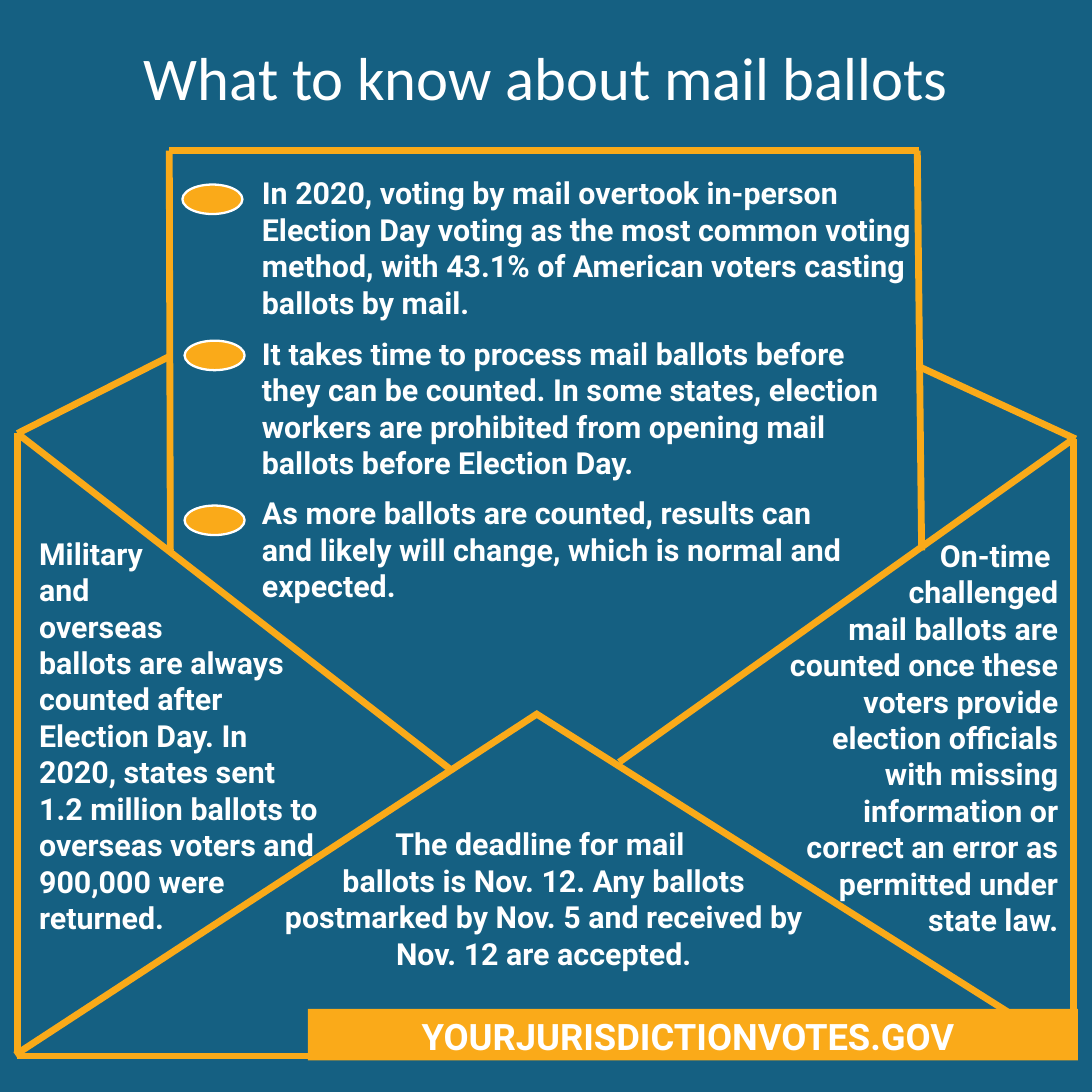
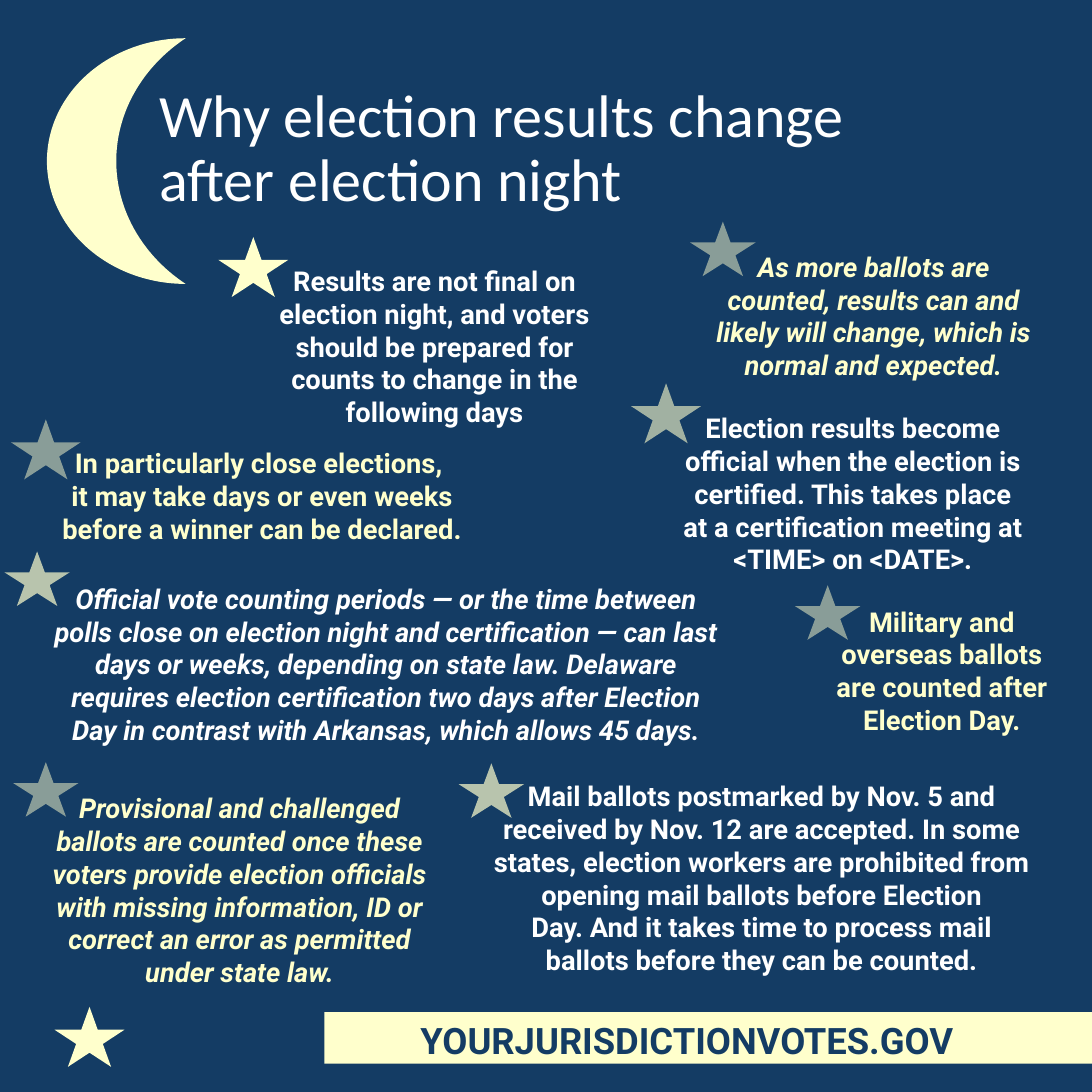
"""Build two square voter-information slides: mail ballots and election night."""
from dataclasses import dataclass

from lxml import etree
from pptx import Presentation
from pptx.dml.color import RGBColor
from pptx.enum.shapes import MSO_CONNECTOR, MSO_SHAPE
from pptx.enum.text import MSO_ANCHOR, PP_ALIGN
from pptx.oxml.ns import qn
from pptx.util import Inches, Pt

LEFT, CENTER, RIGHT = PP_ALIGN.LEFT, PP_ALIGN.CENTER, PP_ALIGN.RIGHT
TOP, MIDDLE = MSO_ANCHOR.TOP, MSO_ANCHOR.MIDDLE
RECT, OVAL, MOON, STAR = (MSO_SHAPE.RECTANGLE, MSO_SHAPE.OVAL,
                          MSO_SHAPE.MOON, MSO_SHAPE.STAR_5_POINT)
STRAIGHT = MSO_CONNECTOR.STRAIGHT


@dataclass(frozen=True)
class Theme:
    teal: str = "156082"
    navy: str = "143C64"
    orange: str = "FAA919"
    cream: str = "FFFFCC"
    white: str = "FFFFFF"
    title_font: str = "Calibri"
    body_font: str = "Roboto"
    title: float = 40
    night_title: float = 39.6
    fact: float = 20
    note: float = 18
    footer: float = 24
    envelope_line: float = 4.5
    oval_line: float = 1.5


T = Theme(orange="FAAA19")
SIDE = Inches(10)
CELL = SIDE / 10
WEB_ADDRESS = "YOURJURISDICTIONVOTES.GOV"

ENVELOPE = [
    ((4.93, 6.53), (0.14, 9.66)), ((4.9, 6.53), (9.85, 9.66)),
    ((0.16, 3.97), (1.56, 3.26)), ((1.55, 1.38), (1.56, 5.04)),
    ((1.55, 1.38), (8.42, 1.38)), ((8.4, 1.38), (8.44, 5.04)),
    ((0.16, 3.97), (0.16, 9.63)), ((0.16, 9.67), (9.83, 9.67)),
    ((9.83, 4.02), (9.83, 9.68)), ((0.16, 3.97), (4.13, 7.05)),
    ((5.67, 6.98), (9.83, 4.02)), ((8.4, 3.35), (9.85, 4.02)),
]

OVAL_SIZE = (0.55, 0.27)
LETTER_FACTS = [
    ((1.67, 1.69), (2.3, 1.55, 6.39, 1.75),
     "In 2020, voting by mail overtook in-person Election Day voting as the most "
     "common voting method, with 43.1% of American voters casting ballots by mail."),
    ((1.69, 3.12), (2.3, 3.02, 5.93, 1.75),
     "It takes time to process mail ballots before they can be counted. In some "
     "states, election workers are prohibited from opening mail ballots before "
     "Election Day."),
    ((1.69, 4.63), (2.3, 4.48, 5.55, 1.41),
     "As more ballots are counted, results can and likely will change, which is "
     "normal and expected."),
]
FLAP_FACTS = [
    ((6.98, 4.87, 2.81, 3.8), RIGHT,
     "On-time \vchallenged\vmail ballots are counted once these voters provide "
     "election officials with missing information or correct an error as permitted "
     "under state law."),
    ((2.32, 7.51, 5.32, 1.75), CENTER,
     "The deadline for mail \vballots is Nov. 12. Any ballots postmarked by Nov. 5 "
     "and received by Nov. 12 are accepted."),
    ((0.26, 4.85, 2.82, 4.14), LEFT,
     "Military\vand\voverseas\vballots are always counted after Election Day. In "
     "2020, states sent 1.2 million ballots to overseas voters and 900,000 were "
     "returned."),
]

SMALL, LARGE = (0.6, 0.5), (0.64, 0.55)
NIGHT_NOTES = [
    ((2, 2.17), LARGE, 100, (2.21, 2.37, 3.54, 1.92), T.white, False,
     "Results are not final on election night, and voters should be prepared for "
     "counts to change in the following days"),
    ((6.32, 2.03), SMALL, 50, (6.41, 2.24, 3.18, 1.62), T.cream, True,
     "As more ballots are counted, results can and likely will change, which is "
     "normal and expected."),
    ((0.1, 3.84), LARGE, 50, (0.4, 4.04, 4, 1.31), T.cream, False,
     "In particularly close elections, \vit may take days or even weeks before a "
     "winner can be declared."),
    ((5.78, 3.51), LARGE, 60, (6.12, 3.72, 3.38, 1.92), T.white, False,
     "Election results become official when the election is certified. This takes "
     "place at a certification meeting at <TIME> on <DATE>."),
    ((0.04, 5.05), SMALL, 70, (0.34, 5.28, 6.39, 1.92), T.white, True,
     "Official vote counting periods — or the time between polls close on election "
     "night and certification — can last days or weeks, depending on state law. "
     "Delaware requires election certification two days after Election Day in "
     "contrast with Arkansas, which allows 45 days."),
    ((7.28, 5.36), SMALL, 50, (7.42, 5.49, 2.41, 1.31), T.cream, False,
     "Military and overseas ballots\vare counted after Election Day."),
    ((0.12, 6.98), SMALL, 50, (0.23, 7.2, 3.93, 2.22), T.cream, True,
     "Provisional and challenged ballots are counted once these voters provide "
     "election officials with missing information, ID or correct an error as "
     "permitted under state law."),
    ((4.2, 6.99), SMALL, 70, (4.36, 7.09, 5.23, 1.92), T.white, False,
     "Mail ballots postmarked by Nov. 5 and received by Nov. 12 are accepted. In "
     "some states, election workers are prohibited from opening mail ballots before "
     "Election\vDay. And it takes time to process mail ballots before they can be "
     "counted."),
]


def grid(*cells):
    return [round(c * CELL) for c in cells]


def rgb(color):
    return RGBColor.from_string(color)


def write(sp, text, *, size, color=T.white, font=T.body_font, bold=True,
          italic=False, align=LEFT, anchor=TOP, spacing=1.0):
    tf = sp.text_frame
    tf.word_wrap = True
    tf.vertical_anchor = anchor
    p = tf.paragraphs[0]
    p.text = text
    p.alignment = align
    p.line_spacing = spacing
    for r in p.runs:
        f = r.font
        f.name, f.size, f.bold, f.italic = font, Pt(size), bold, italic
        f.color.rgb = rgb(color)


def add_text(s, box, text, **style):
    write(s.shapes.add_textbox(*grid(*box)), text, **style)


def add_shape(s, kind, box, fill, outline=None, opacity=100):
    sp = s.shapes.add_shape(kind, *grid(*box))
    sp.shadow.inherit = False
    sp.fill.solid()
    sp.fill.fore_color.rgb = rgb(fill)
    if opacity < 100:
        color = sp._element.spPr.find(".//" + qn("a:srgbClr"))
        etree.SubElement(color, qn("a:alpha"), val=str(opacity * 1000))
    if outline:
        sp.line.color.rgb = rgb(outline)
        sp.line.width = Pt(T.oval_line)
    else:
        sp.line.fill.background()
    return sp


def add_line(group, start, end):
    line = group.shapes.add_connector(STRAIGHT, *grid(*start, *end))
    line.line.color.rgb = rgb(T.orange)
    line.line.width = Pt(T.envelope_line)
    etree.SubElement(line._element.spPr, qn("a:effectLst"))


def start_slide(prs, background, title, box, size, align=LEFT):
    s = prs.slides.add_slide(prs.slide_layouts[6])
    s.background.fill.solid()
    s.background.fill.fore_color.rgb = rgb(background)
    add_text(s, box, title, size=size, font=T.title_font, bold=False,
             align=align, anchor=MIDDLE, spacing=0.9)
    return s


def add_footer(s, left, top, fill, color, text_left):
    bar = add_shape(s, RECT, (left, top, 7.05, 0.47), fill)
    bar.text_frame.margin_left = grid(text_left - left)[0]
    write(bar, WEB_ADDRESS, size=T.footer, color=color)


def build_mail_slide(prs):
    s = start_slide(prs, T.teal, "What to know about mail ballots",
                    (0, -0.22, 10, 1.93), T.title, CENTER)
    envelope = s.shapes.add_group_shape()
    for start, end in ENVELOPE:
        add_line(envelope, start, end)
    for spot, box, text in LETTER_FACTS:
        add_shape(s, OVAL, spot + OVAL_SIZE, T.orange, T.white)
        add_text(s, box, text, size=T.fact)
    for box, align, text in FLAP_FACTS:
        add_text(s, box, text, size=T.fact, align=align)
    add_footer(s, 2.82, 9.24, T.orange, T.white, 3.86)


def build_night_slide(prs):
    s = start_slide(prs, T.navy, "Why election results change after election night",
                    (1.36, 0.41, 7.45, 1.93), T.night_title)
    add_shape(s, MOON, (0.43, 0.35, 1.27, 2.25), T.cream)
    add_shape(s, STAR, (0.5, 9.22) + LARGE, T.cream)
    for spot, star, opacity, box, color, italic, text in NIGHT_NOTES:
        add_shape(s, STAR, spot + star, T.cream, opacity=opacity)
        add_text(s, box, text, size=T.note, color=color, italic=italic, align=CENTER)
    add_footer(s, 2.97, 9.27, T.cream, T.navy, 3.85)


def main():
    prs = Presentation()
    prs.slide_width = prs.slide_height = SIDE
    build_mail_slide(prs)
    build_night_slide(prs)
    prs.save("out.pptx")


if __name__ == "__main__":
    main()
